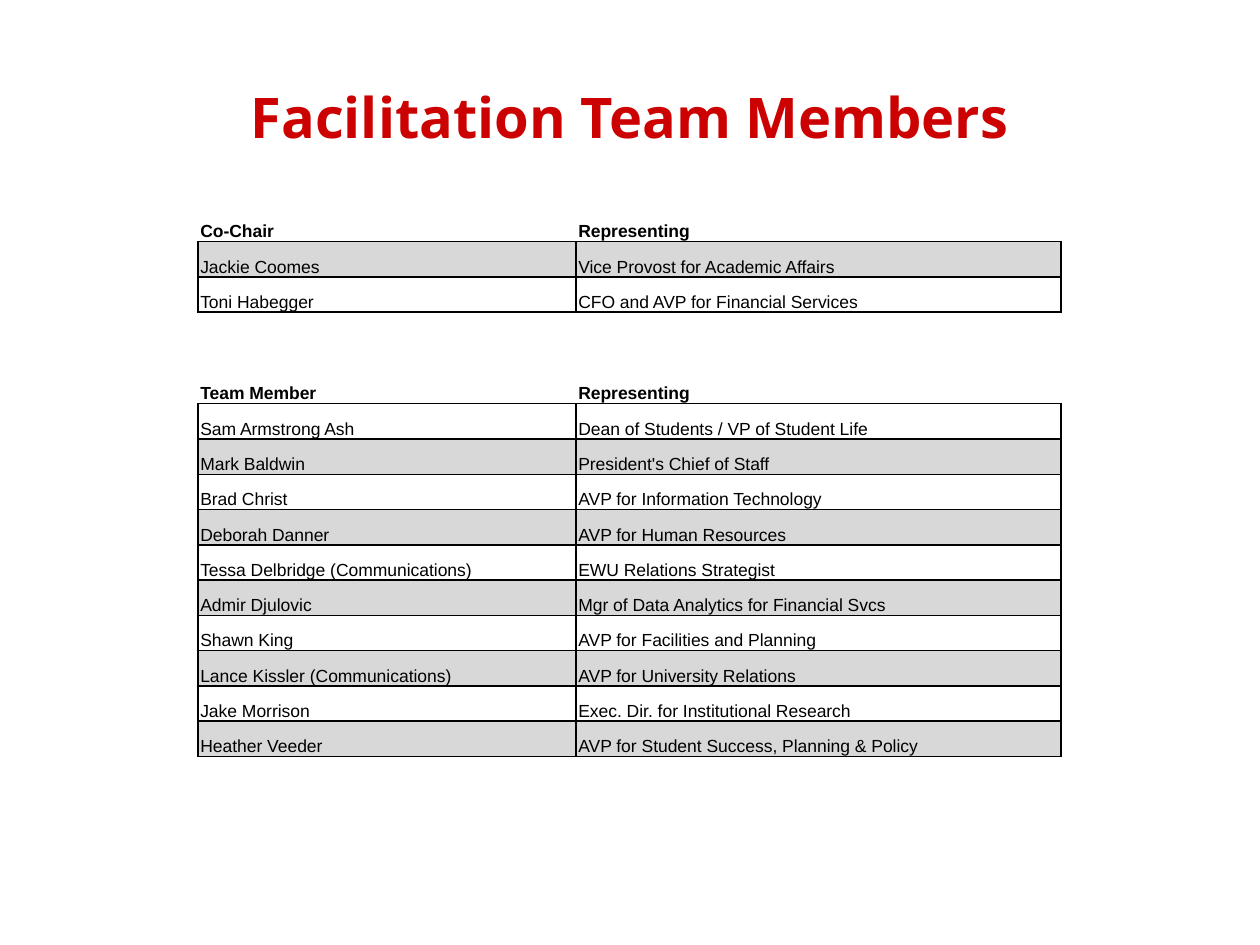
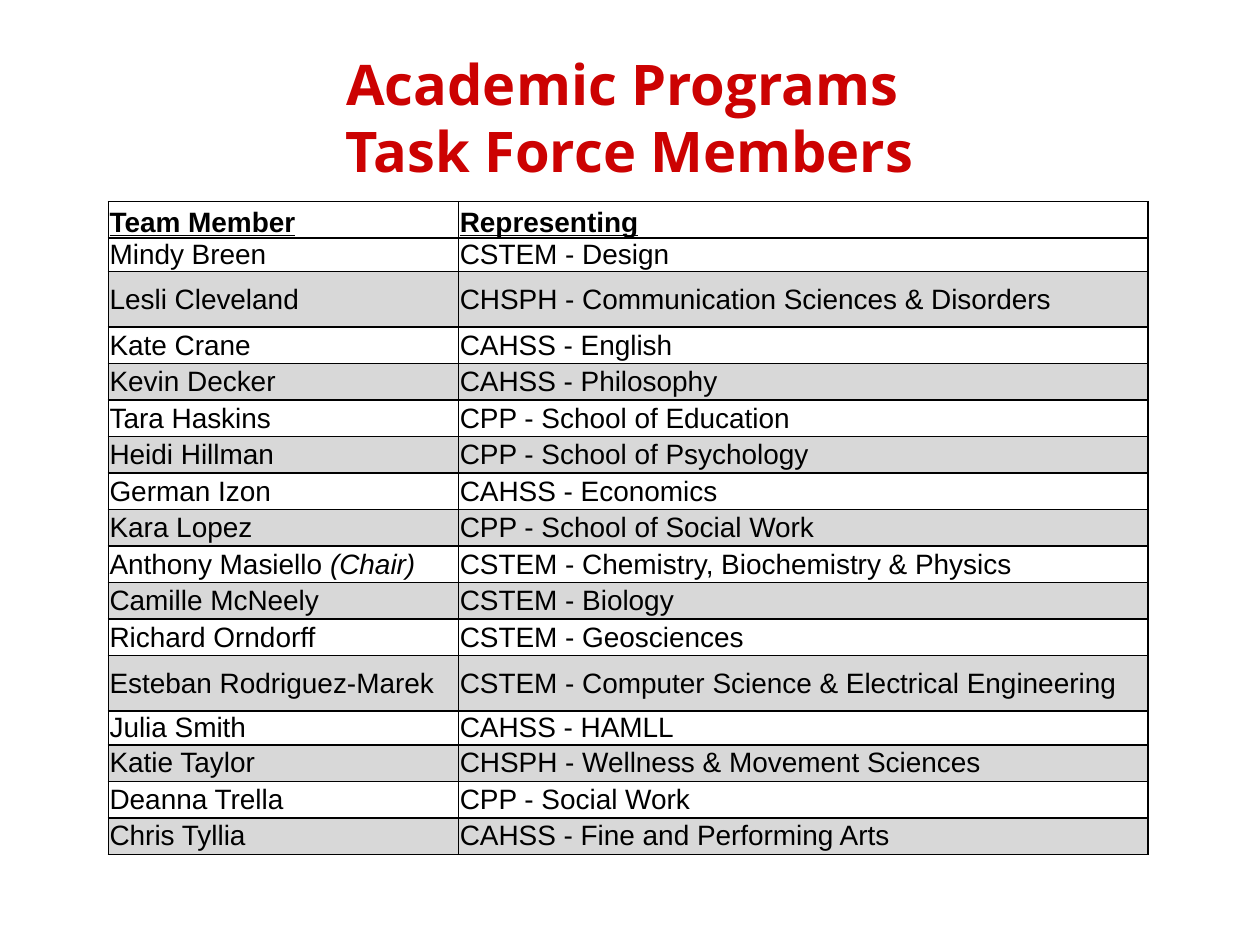
from lxml.etree import SubElement
from pptx import Presentation
from pptx.dml.color import RGBColor
from pptx.enum.text import MSO_ANCHOR, PP_ALIGN
from pptx.oxml.ns import qn
from pptx.util import Inches, Pt

RED, BLACK, GRAY = "CC0202", "000000", "D8D8D8"
NO_STYLE = "{2D5ABB26-0587-4C30-8999-92F81FD0307C}"
BLANK = ("", "")


def color(hex_string):
    return RGBColor.from_string(hex_string)


def add_borders(cell):
    properties = cell._tc.get_or_add_tcPr()
    for side in ("a:lnL", "a:lnR", "a:lnT", "a:lnB"):
        line = SubElement(properties, qn(side), w=str(Pt(1)))
        fill = SubElement(line, qn("a:solidFill"))
        SubElement(fill, qn("a:srgbClr"), val=BLACK)


facilitation_rows = [
    ("Co-Chair", "Representing"),
    ("Jackie Coomes", "Vice Provost for Academic Affairs"),
    ("Toni Habegger", "CFO and AVP for Financial Services"),
    BLANK,
    BLANK,
    ("Team Member", "Representing"),
    ("Sam Armstrong Ash", "Dean of Students / VP of Student Life"),
    ("Mark Baldwin", "President's Chief of Staff"),
    ("Brad Christ", "AVP for Information Technology"),
    ("Deborah Danner", "AVP for Human Resources"),
    ("Tessa Delbridge (Communications)", "EWU Relations Strategist"),
    ("Admir Djulovic", "Mgr of Data Analytics for Financial Svcs"),
    ("Shawn King", "AVP for Facilities and Planning"),
    ("Lance Kissler (Communications)", "AVP for University Relations"),
    ("Jake Morrison", "Exec. Dir. for Institutional Research"),
    ("Heather Veeder", "AVP for Student Success, Planning & Policy"),
]

task_force_rows = [
    ("Team Member", "Representing"),
    ("Mindy Breen", "CSTEM - Design"),
    ("Lesli Cleveland", "CHSPH - Communication Sciences & Disorders"),
    ("Kate Crane", "CAHSS - English"),
    ("Kevin Decker", "CAHSS - Philosophy"),
    ("Tara Haskins", "CPP - School of Education"),
    ("Heidi Hillman", "CPP - School of Psychology"),
    ("German Izon", "CAHSS - Economics"),
    ("Kara Lopez", "CPP - School of Social Work"),
    ("Anthony Masiello (Chair)", "CSTEM - Chemistry, Biochemistry & Physics"),
    ("Camille McNeely", "CSTEM - Biology"),
    ("Richard Orndorff", "CSTEM - Geosciences"),
    ("Esteban Rodriguez-Marek", "CSTEM - Computer Science & Electrical Engineering"),
    ("Julia Smith", "CAHSS - HAMLL"),
    ("Katie Taylor", "CHSPH - Wellness & Movement Sciences"),
    ("Deanna Trella", "CPP - Social Work"),
    ("Chris Tyllia", "CAHSS - Fine and Performing Arts"),
]

# "heights" lists only the rows that differ from "row_height"
rosters = [
    dict(title="Facilitation Team Members", rows=facilitation_rows,
         left=1.57, top=1.75, widths=(3, 3.85), row_height=0.28,
         heights={0: 0.15, 5: 0.15}, headers=(0, 5), shaded_parity=1,
         size=10, margin=0.02, anchor=MSO_ANCHOR.BOTTOM, boxed_header=False),
    dict(title="Academic Programs \vTask Force Members", rows=task_force_rows,
         left=0.86, top=1.6, widths=(2.78, 5.47), row_height=0.29,
         heights={1: 0.25, 2: 0.44, 12: 0.44, 13: 0.25}, headers=(0,), shaded_parity=0,
         size=16, margin=0.01, anchor=MSO_ANCHOR.MIDDLE, boxed_header=True),
]

presentation = Presentation()
presentation.slide_width = Inches(10)
presentation.slide_height = Inches(7.5)

for roster in rosters:
    slide = presentation.slides.add_slide(presentation.slide_layouts[6])

    # Title
    title = slide.shapes.add_textbox(Inches(0.5), Inches(0.3), Inches(9), Inches(1.25))
    title.text_frame.word_wrap = True
    title.text_frame.vertical_anchor = MSO_ANCHOR.MIDDLE
    paragraph = title.text_frame.paragraphs[0]
    paragraph.text = roster["title"]
    paragraph.alignment = PP_ALIGN.CENTER
    paragraph.font.name = "Open Sans"
    paragraph.font.size = Pt(32)
    paragraph.font.bold = True
    paragraph.font.color.rgb = color(RED)

    # Table grid
    rows = roster["rows"]
    heights = [roster["heights"].get(i, roster["row_height"]) for i in range(len(rows))]
    table = slide.shapes.add_table(
        len(rows), 2, Inches(roster["left"]), Inches(roster["top"]),
        Inches(sum(roster["widths"])), Inches(sum(heights))).table
    table.first_row = False
    table.horz_banding = False
    table._tbl.tblPr.find(qn("a:tableStyleId")).text = NO_STYLE
    for column, width in zip(table.columns, roster["widths"]):
        column.width = Inches(width)

    # Table cells
    for row_index, texts in enumerate(rows):
        table.rows[row_index].height = Inches(heights[row_index])
        is_header = row_index in roster["headers"]
        is_member = texts != BLANK and not is_header
        is_shaded = is_member and row_index % 2 == roster["shaded_parity"]

        for cell, text in zip(table.rows[row_index].cells, texts):
            cell.margin_left = cell.margin_right = Inches(roster["margin"])
            cell.margin_top = cell.margin_bottom = 0
            cell.vertical_anchor = MSO_ANCHOR.MIDDLE if is_member else MSO_ANCHOR.BOTTOM
            if is_member:
                cell.vertical_anchor = roster["anchor"]
            if is_member or (is_header and roster["boxed_header"]):
                add_borders(cell)
            if is_shaded:
                cell.fill.solid()
                cell.fill.fore_color.rgb = color(GRAY)
            else:
                cell.fill.background()

            paragraph = cell.text_frame.paragraphs[0]
            name, chair, _ = text.partition("(Chair)")
            if name:
                paragraph.add_run().text = name
            if chair:
                run = paragraph.add_run()
                run.text = chair
                run.font.italic = True
            paragraph.font.name = "Arial"
            paragraph.font.size = Pt(roster["size"])
            paragraph.font.bold = is_header
            paragraph.font.underline = is_header and roster["boxed_header"]
            paragraph.font.color.rgb = color(BLACK)

presentation.save("out.pptx")
